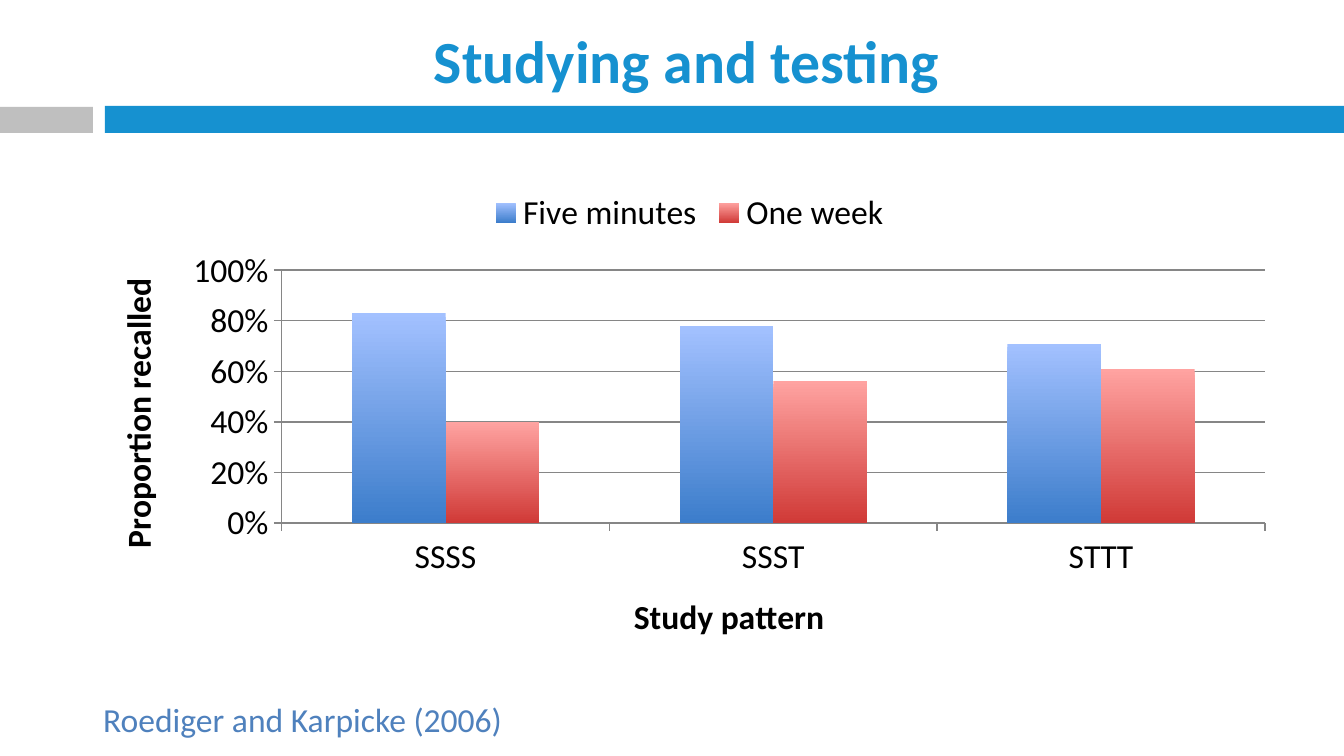
"""Build a slide that charts recall by study pattern."""
from lxml.etree import SubElement
from pptx import Presentation
from pptx.chart.data import CategoryChartData as ChartData
from pptx.dml.color import RGBColor as RGB
from pptx.enum.chart import XL_CHART_TYPE as Kind, XL_LEGEND_POSITION as Spot
from pptx.enum.chart import XL_TICK_MARK as Tick
from pptx.enum.shapes import MSO_SHAPE as Shape
from pptx.enum.text import MSO_ANCHOR as Anchor, MSO_AUTO_SIZE as Fit, PP_ALIGN as Align
from pptx.util import Pt

BLUE, GRAY, NAVY = RGB(0x16, 0x91, 0xD0), RGB(0xBF, 0xBF, 0xBF), RGB(0x4F, 0x81, 0xBD)
BLACK, LINE = RGB(0, 0, 0), RGB(0x86, 0x86, 0x86)
FACE = "Calibri"
TITLE = "Studying and testing"
CITE = "Roediger and Karpicke (2006)"
BARS = [((105, 106, 1239, 27), BLUE), ((0, 107, 93, 26), GRAY)]
CATS = ["SSSS", "SSST", "STTT"]
SERIES = [
    ("Five minutes", (0.83, 0.78, 0.71), RGB(0xA3, 0xC1, 0xFF), RGB(0x3C, 0x7D, 0xCB)),
    ("One week", (0.4, 0.56, 0.61), RGB(0xFF, 0xA3, 0xA1), RGB(0xD0, 0x3A, 0x37)),
]
AXES = {"x": "Study pattern", "y": "Proportion recalled"}
PLOT = {"x": 0.16, "y": 0.19, "w": 0.82, "h": 0.51}


def px(*vals):
    return [round(v * 914400 / 134.4) for v in vals]


def style(font, size, color, bold=False):
    font.name, font.size, font.bold = FACE, Pt(size), bold
    font.color.rgb = color


def add_bar(slide, box, color):
    bar = slide.shapes.add_shape(Shape.RECTANGLE, *px(*box))
    bar.shadow.inherit = False
    bar.fill.solid()
    bar.fill.fore_color.rgb = color
    bar.line.fill.background()


def set_axis(axis, text):
    axis.has_title = True
    par = axis.axis_title.text_frame.paragraphs[0]
    par.text = text
    style(par.font, 18, BLACK, True)
    axis.major_tick_mark, axis.minor_tick_mark = Tick.OUTSIDE, Tick.NONE
    axis.format.line.color.rgb = LINE


def set_plot(chart):
    area = chart.element.xpath("c:chart/c:plotArea")[0]
    for old in area.xpath("c:layout"):
        area.remove(old)
    ns = "{%s}" % area.nsmap["c"]
    layout = SubElement(area, ns + "layout")
    area.insert(0, layout)
    manual = SubElement(layout, ns + "manualLayout")
    parts = {"layoutTarget": "inner", "xMode": "edge", "yMode": "edge", **PLOT}
    for name, val in parts.items():
        SubElement(manual, ns + name).set("val", str(val))


def add_chart(slide):
    data = ChartData(number_format="0%")
    data.categories = CATS
    for name, vals, *_ in SERIES:
        data.add_series(name, vals)
    box = px(90, 176, 1199, 496)
    chart = slide.shapes.add_chart(Kind.COLUMN_CLUSTERED, *box, data).chart
    style(chart.font, 18, BLACK)
    chart.has_title = False
    chart.has_legend = True
    chart.legend.position = Spot.TOP
    chart.legend.include_in_layout = False
    set_axis(chart.category_axis, AXES["x"])
    axis = chart.value_axis
    set_axis(axis, AXES["y"])
    axis.minimum_scale, axis.maximum_scale, axis.major_unit = 0, 1, 0.2
    axis.tick_labels.number_format = "0%"
    axis.tick_labels.number_format_is_linked = False
    axis.has_major_gridlines = True
    axis.major_gridlines.format.line.color.rgb = LINE
    plot = chart.plots[0]
    plot.gap_width, plot.overlap, plot.vary_by_categories = 150, 0, False
    for bars, (_, _, top, base) in zip(plot.series, SERIES):
        fill = bars.format.fill
        fill.gradient()
        fill.gradient_angle = 270
        for stop, color in zip(fill.gradient_stops, (top, base)):
            stop.color.rgb = color
    set_plot(chart)


def main():
    deck = Presentation()
    deck.slide_width, deck.slide_height = px(1344, 756)
    slide = deck.slides.add_slide(deck.slide_layouts[5])
    for box, color in BARS:
        add_bar(slide, box, color)

    title = slide.shapes.title
    title.left, title.top, title.width, title.height = px(105, 26, 1164, 68)
    title.text = TITLE
    title.text_frame.vertical_anchor = Anchor.MIDDLE
    par = title.text_frame.paragraphs[0]
    par.alignment = Align.CENTER
    style(par.font, 32, BLUE, True)

    add_chart(slide)

    frame = slide.shapes.add_textbox(*px(90, 692, 766, 54)).text_frame
    frame.word_wrap, frame.auto_size = True, Fit.SHAPE_TO_FIT_TEXT
    frame.text = CITE
    style(frame.paragraphs[0].font, 18, NAVY)
    deck.save("out.pptx")


if __name__ == "__main__":
    main()
